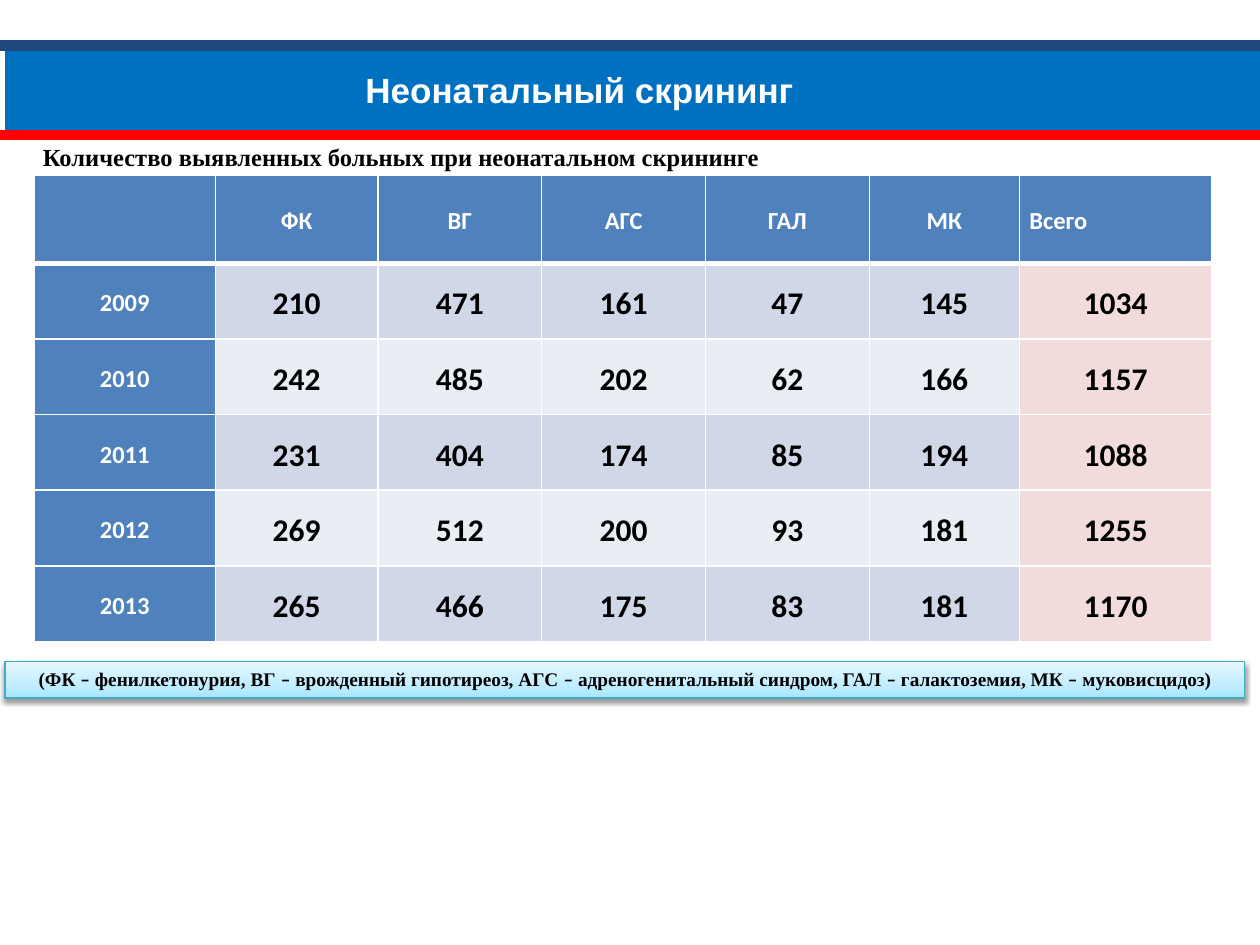
import lxml.etree
import pptx
import pptx.dml.color
import pptx.enum.shapes
import pptx.enum.text
import pptx.oxml
import pptx.oxml.ns
import pptx.util
from pptx.util import Inches

COLORS = {
    "band": "0070C0", "thin": "4B7EBC", "navy": "1F497D", "red": "FF0000",
    "head": "4F81BD", "odd": "D0D8E8", "even": "E9EDF4", "total": "F2DCDB",
    "white": "FFFFFF", "black": "000000", "note_line": "46AAC5",
    "note_low": "A7E6FF", "note_mid": "C1EDFF", "note_high": "E7F8FF",
}
ALIGN = pptx.enum.text.PP_ALIGN
MIDDLE = pptx.enum.text.MSO_ANCHOR.MIDDLE
RECTANGLE = pptx.enum.shapes.MSO_SHAPE.RECTANGLE
NAMESPACE = pptx.oxml.ns.nsdecls("a")

HEADINGS = ["", "ФК", "ВГ", "АГС", "ГАЛ", "МК", "Всего"]
PATIENTS = [
    [2009, 210, 471, 161, 47, 145, 1034],
    [2010, 242, 485, 202, 62, 166, 1157],
    [2011, 231, 404, 174, 85, 194, 1088],
    [2012, 269, 512, 200, 93, 181, 1255],
    [2013, 265, 466, 175, 83, 181, 1170],
]
COLUMN_WIDTHS = [1.44, 1.29, 1.3, 1.3, 1.3, 1.19, 1.53]
ROW_HEIGHTS = [0.7] + [0.6] * len(PATIENTS)
NOTE = ("(ФК – фенилкетонурия, ВГ – врожденный гипотиреоз, АГС – адреногенитальный "
        "синдром, ГАЛ – галактоземия, МК – муковисцидоз)")


def rgb(name):
    return pptx.dml.color.RGBColor.from_string(COLORS[name])


def format_span(span, font, size, color):
    span.font.name = font
    span.font.size = pptx.util.Pt(size)
    span.font.bold = True
    span.font.color.rgb = rgb(color)


def set_line(frame, text, font, size, color, align):
    """Fill a text frame with one unwrapped, vertically centred line."""
    frame.text = text
    frame.word_wrap = False
    frame.vertical_anchor = MIDDLE
    frame.auto_size = pptx.enum.text.MSO_AUTO_SIZE.SHAPE_TO_FIT_TEXT
    para = frame.paragraphs[0]
    para.alignment = align
    format_span(para.runs[0], font, size, color)


def add_rule(slide, left, top, width, color, weight):
    rule = slide.shapes.add_connector(
        pptx.enum.shapes.MSO_CONNECTOR.STRAIGHT, left, top, left + width, top)
    rule.line.color.rgb = rgb(color)
    rule.line.width = pptx.util.Pt(weight)
    lxml.etree.SubElement(rule.element.spPr, pptx.oxml.ns.qn("a:effectLst"))


def add_header(slide, left, top, width, height):
    band = slide.shapes.add_shape(RECTANGLE, left + Inches(0.04), top, width, height)
    band.shadow.inherit = False
    band.fill.solid()
    band.fill.fore_color.rgb = rgb("band")
    band.line.fill.background()
    for offset, color, weight in ((0, "thin", 0.75), (0, "navy", 6), (height, "red", 6)):
        add_rule(slide, left, top + offset, width, color, weight)

    title = slide.shapes.title
    title.left, title.top = left + Inches(2.8), top + Inches(0.13)
    title.width, title.height = Inches(3.63), Inches(0.44)
    set_line(title.text_frame, "Неонатальный скрининг", "Arial", 20, "white", ALIGN.LEFT)
    band.element.addnext(title.element)


def add_caption(slide, left, top, width, height):
    box = slide.shapes.add_textbox(left, top, width, height)
    set_line(box.text_frame, "Количество выявленных больных при неонатальном скрининге",
             "Times New Roman", 14, "black", ALIGN.CENTER)


def set_borders(cell, weights):
    """Draw white borders, with weights in points for left, right, top, bottom."""
    properties = cell._tc.get_or_add_tcPr()
    for side, weight in zip("LRTB", weights):
        properties.append(pptx.oxml.parse_xml(
            f'<a:ln{side} {NAMESPACE} w="{pptx.util.Pt(weight)}"><a:solidFill>'
            f'<a:srgbClr val="{COLORS["white"]}"/></a:solidFill></a:ln{side}>'))


def cell_fill(row, column):
    if row == 0 or column == 0:
        return "head"
    if column == len(HEADINGS) - 1:
        return "total"
    return "odd" if row % 2 else "even"


def add_patient_table(slide, left, top, width, height):
    rows = [HEADINGS] + PATIENTS
    table = slide.shapes.add_table(
        len(rows), len(HEADINGS), left, top, width, height).table
    for column, size in zip(table.columns, COLUMN_WIDTHS):
        column.width = Inches(size)
    for row, size in zip(table.rows, ROW_HEIGHTS):
        row.height = Inches(size)

    for r, values in enumerate(rows):
        for c, value in enumerate(values):
            cell = table.cell(r, c)
            set_borders(cell, (1, 1, 3 if r == 1 else 1, 3 if r == 0 else 1))
            fill = cell_fill(r, c)
            cell.fill.solid()
            cell.fill.fore_color.rgb = rgb(fill)
            cell.margin_left = cell.margin_right = Inches(0.08)
            cell.margin_top = cell.margin_bottom = 0
            cell.vertical_anchor = MIDDLE
            cell.text = str(value)
            para = cell.text_frame.paragraphs[0]
            para.line_spacing = 1.15
            para.alignment = ALIGN.LEFT if value == "Всего" else ALIGN.CENTER
            size, color = (14, "white") if fill == "head" else (18, "black")
            for span in para.runs:
                format_span(span, "Calibri", size, color)


def add_note(slide, left, top, width, height):
    box = slide.shapes.add_shape(RECTANGLE, left, top, width, height)
    box.line.color.rgb = rgb("note_line")
    box.line.width = pptx.util.Pt(0.75)
    stops = "".join(
        f'<a:gs pos="{position * 1000}"><a:srgbClr val="{COLORS[name]}"/></a:gs>'
        for position, name in ((0, "note_low"), (35, "note_mid"), (100, "note_high")))
    box.element.spPr.find(pptx.oxml.ns.qn("a:ln")).addprevious(pptx.oxml.parse_xml(
        f'<a:gradFill {NAMESPACE} rotWithShape="1"><a:gsLst>{stops}</a:gsLst>'
        '<a:lin ang="16200000" scaled="1"/></a:gradFill>'))
    box.element.spPr.append(pptx.oxml.parse_xml(
        f'<a:effectLst {NAMESPACE}><a:outerShdw blurRad="40000" dist="20000" '
        f'dir="5400000" rotWithShape="0"><a:srgbClr val="{COLORS["black"]}">'
        '<a:alpha val="38000"/></a:srgbClr></a:outerShdw></a:effectLst>'))

    frame = box.text_frame
    frame.word_wrap = True
    frame.vertical_anchor = pptx.enum.text.MSO_ANCHOR.TOP
    frame.auto_size = pptx.enum.text.MSO_AUTO_SIZE.SHAPE_TO_FIT_TEXT
    para = frame.paragraphs[0]
    para.alignment = ALIGN.CENTER
    for index, part in enumerate(NOTE.split("–")):
        pieces = [(part, "Times New Roman")]
        if index:
            pieces.insert(0, ("–", "Calibri"))
        for text, font in pieces:
            span = para.add_run()
            span.text = text
            format_span(span, font, 11, "black")


def main():
    deck = pptx.Presentation()
    deck.slide_width, deck.slide_height = Inches(10), Inches(7.5)
    slide = deck.slides.add_slide(deck.slide_layouts.get_by_name("Title Only"))
    add_header(slide, 0, Inches(0.36), Inches(10), Inches(0.71))
    add_patient_table(slide, Inches(0.27), Inches(1.39), Inches(9.37), Inches(3.7))
    add_note(slide, Inches(0.04), Inches(5.25), Inches(9.84), Inches(0.29))
    add_caption(slide, Inches(0.2), Inches(1.07), Inches(5.97), Inches(0.34))
    deck.save("out.pptx")


if __name__ == "__main__":
    main()
